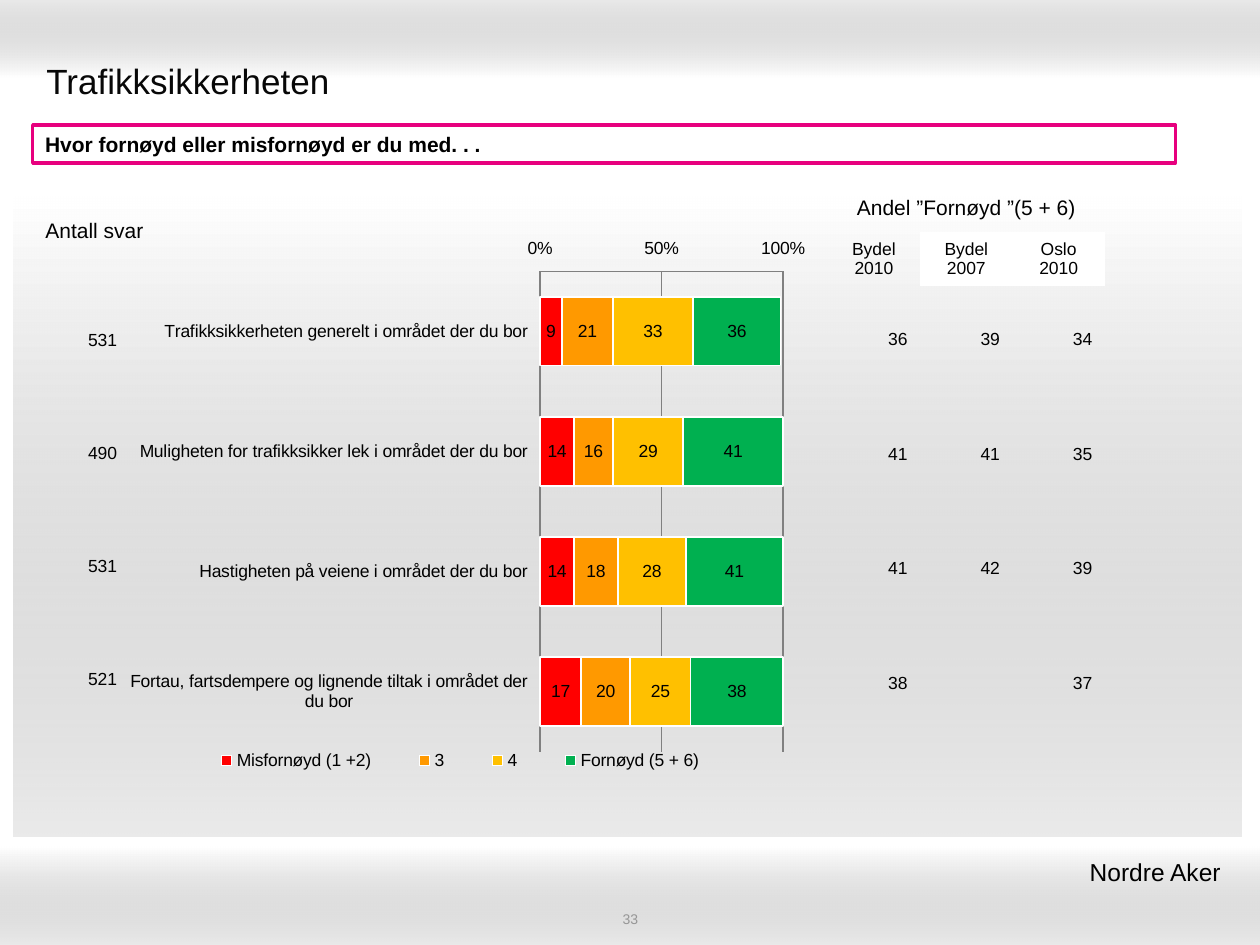
from lxml import etree
from pptx import Presentation
from pptx import util as u
from pptx.chart.data import CategoryChartData
from pptx.dml.color import RGBColor
from pptx.enum import chart as charts, shapes, text
from pptx.oxml.ns import qn

Pt = u.Pt
FONT = "Arial"
LEFT, CENTER, RIGHT = text.PP_ALIGN.LEFT, text.PP_ALIGN.CENTER, text.PP_ALIGN.RIGHT
NO_STYLE = "{2D5ABB26-0587-4C30-8999-92F81FD0307C}"

# left, top, width, height, direction of the fade from white to grey
BANDS = [
    (0, 0, 720, 44.6, 90),
    (0, 483.8, 720, 56.2, 270),
    (7.9, 112.3, 701.3, 365.8, 270),
]
# text, left, top, width, height, size, colour, alignment
LABELS = [
    ("Trafikksikkerheten", 19.4, 25.9, 680.4, 39.6, 20, "080808", LEFT),
    ("33", 246.2, 519.8, 228.2, 10.1, 8, "969696", CENTER),
    ("Nordre Aker", 439.2, 486, 265.5, 24.5, 14, "000000", RIGHT),
]
QUESTION = "Hvor fornøyd eller misfornøyd er du med. . ."
CATEGORIES = [
    "Trafikksikkerheten generelt i området der du bor",
    "Muligheten for trafikksikker lek i området der du bor",
    "Hastigheten på veiene i området der du bor",
    "Fortau, fartsdempere og lignende tiltak i området der du bor",
]
SERIES = [
    ("Misfornøyd (1 +2)", (9, 14, 14, 17), "FF0000"),
    ("3", (21, 16, 18, 20), "FF9900"),
    ("4", (33, 29, 28, 25), "FFC000"),
    ("Fornøyd (5 + 6)", (36, 41, 41, 38), "00B050"),
]
SHARES = [["36", "39", "34"], ["41", "41", "35"], ["41", "42", "39"], ["38", "", "37"]]
SHARE_TITLE = "Andel ”Fornøyd ”(5 + 6)"
SHARE_HEADS = ["Bydel\n2010", "Bydel\n2007", "Oslo\n2010"]
ANSWERS = [["531"], ["490"], ["531"], ["521"]]


def colour(value):
    return RGBColor.from_string(value)


def style_text(frame, size, shade="000000", align=LEFT, bold=False):
    for para in frame.paragraphs:
        para.alignment = align
        for span in para.runs:
            span.font.name, span.font.size, span.font.bold = FONT, Pt(size), bold
            span.font.color.rgb = colour(shade)


def add_box(page, left, top, width, height):
    box = page.shapes.add_shape(
        shapes.MSO_SHAPE.RECTANGLE, Pt(left), Pt(top), Pt(width), Pt(height))
    box.shadow.inherit = False
    return box


def add_band(page, left, top, width, height, angle):
    """Add a rectangle fading from white to translucent grey."""
    band = add_box(page, left, top, width, height)
    band.line.fill.background()
    band.fill.gradient()
    band.fill.gradient_angle = angle
    for stop, shade in zip(band.fill.gradient_stops, ("FFFFFF", "999999")):
        stop.color.rgb = colour(shade)
    grey = band._element.findall(".//" + qn("a:srgbClr"))[-1]
    etree.SubElement(grey, qn("a:alpha"), val="20000")


def add_label(page, words, left, top, width, height, size, shade, align):
    box = page.shapes.add_textbox(Pt(left), Pt(top), Pt(width), Pt(height))
    frame = box.text_frame
    frame.word_wrap = True
    frame.vertical_anchor = text.MSO_ANCHOR.MIDDLE
    frame.text = words
    style_text(frame, size, shade, align)


def add_table(page, rows, left, top, width, heights, align, size=10):
    """Add a table without style, with equal column widths."""
    table = page.shapes.add_table(
        len(rows), len(rows[0]), Pt(left), Pt(top), Pt(width), Pt(sum(heights))).table
    table.first_row = table.horz_banding = False
    table._tbl.find(".//" + qn("a:tableStyleId")).text = NO_STYLE
    for row, height, values in zip(table.rows, heights, rows):
        row.height = Pt(height)
        for cell, value in zip(row.cells, values):
            cell.fill.background()
            cell.vertical_anchor = text.MSO_ANCHOR.MIDDLE
            cell.text = value
            style_text(cell.text_frame, size, align=align)
    return table


def place(part, x, y, width, height, inner=False):
    """Fix the place of a chart part, in fractions of the chart."""
    old = part.find(qn("c:layout"))
    if old is not None:
        part.remove(old)
    layout = etree.Element(qn("c:layout"))
    manual = etree.SubElement(layout, qn("c:manualLayout"))
    settings = [("layoutTarget", "inner")] if inner else []
    settings += [("xMode", "edge"), ("yMode", "edge"),
                 ("x", x), ("y", y), ("w", width), ("h", height)]
    for name, value in settings:
        etree.SubElement(manual, qn("c:" + name), val=str(value))
    before = part.find(qn("c:legendPos"))
    part.insert(0 if before is None else 1, layout)


def add_bars(page, left, top, width, height):
    data = CategoryChartData()
    data.categories = CATEGORIES
    for name, values, _ in SERIES:
        data.add_series(name, values)
    chart = page.shapes.add_chart(
        charts.XL_CHART_TYPE.BAR_STACKED, Pt(left), Pt(top), Pt(width), Pt(height), data).chart
    chart.has_title = False
    chart.font.name, chart.font.size = FONT, Pt(10)
    chart.font.color.rgb = colour("000000")

    plot = chart.plots[0]
    plot.gap_width, plot.overlap, plot.vary_by_categories = 75, 100, False
    for series, (_, _, shade) in zip(plot.series, SERIES):
        series.format.fill.solid()
        series.format.fill.fore_color.rgb = colour(shade)
        series.format.line.color.rgb = colour("FFFFFF")
        series.format.line.width = Pt(1)
        labels = series.data_labels
        labels.show_value = True
        labels.number_format, labels.number_format_is_linked = "0", False

    names, scale = chart.category_axis, chart.value_axis
    names.reverse_order = True
    names.major_tick_mark = charts.XL_TICK_MARK.NONE
    names.tick_label_position = charts.XL_TICK_LABEL_POSITION.LOW
    scale.minimum_scale, scale.maximum_scale, scale.major_unit = 0, 100, 50
    scale.major_tick_mark = charts.XL_TICK_MARK.INSIDE
    scale.tick_label_position = charts.XL_TICK_LABEL_POSITION.LOW
    scale.tick_labels.number_format = "General\\%"
    scale.tick_labels.number_format_is_linked = False
    scale.has_major_gridlines = True
    for part in (names, scale, scale.major_gridlines):
        part.format.line.color.rgb = colour("808080")
        part.format.line.width = Pt(0.75)

    chart.has_legend = True
    chart.legend.position = charts.XL_LEGEND_POSITION.BOTTOM
    chart.legend.include_in_layout = False
    place(chart._chartSpace.find(".//" + qn("c:plotArea")), 0.6, 0.08, 0.35, 0.84, inner=True)
    place(chart.legend._element, 0.08, 0.91, 0.81, 0.05)


def main():
    deck = Presentation()
    deck.slide_width, deck.slide_height = Pt(720), Pt(540)
    page = deck.slides.add_slide(deck.slide_layouts[6])
    for band in BANDS:
        add_band(page, *band)
    for label in LABELS:
        add_label(page, *label)

    question = add_box(page, 18.7, 71.3, 653, 21.8)
    question.fill.solid()
    question.fill.fore_color.rgb = colour("FFFFFF")
    question.line.color.rgb = colour("E7007E")
    question.line.width = Pt(2)
    question.text_frame.text = QUESTION
    style_text(question.text_frame, 12, bold=True)

    add_bars(page, 70.6, 128.9, 396.7, 326.9)
    add_table(page, SHARES, 473, 161.3, 158.4, [65.5] * 4, RIGHT)
    heads = add_table(page, [[SHARE_TITLE, "", ""], SHARE_HEADS],
                      473, 105.8, 158.4, [26.6, 31], CENTER)
    heads.cell(0, 0).merge(heads.cell(0, 2))
    style_text(heads.cell(0, 0).text_frame, 12, align=CENTER)
    for column in (1, 2):
        fill = heads.cell(1, column).fill
        fill.solid()
        fill.fore_color.rgb = colour("FFFFFF")
    add_table(page, ANSWERS, 36.7, 162, 37.4, [64.6] * 4, RIGHT)
    add_table(page, [["Antall svar"]], 2.9, 110.9, 102.2, [42.5], CENTER, size=12)
    deck.save("out.pptx")


if __name__ == "__main__":
    main()
